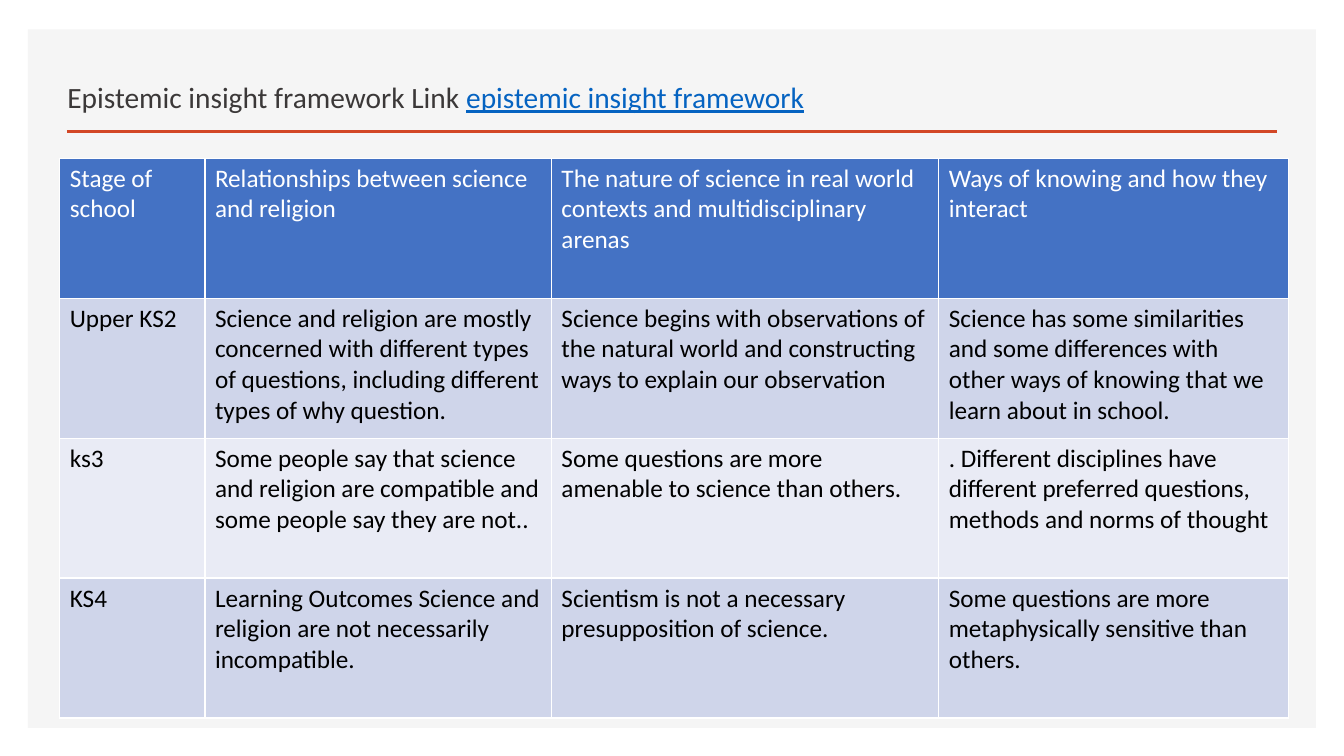
from lxml import etree
from pptx import Presentation
from pptx.dml.color import RGBColor
from pptx.enum.shapes import MSO_CONNECTOR, MSO_SHAPE
from pptx.enum.text import MSO_ANCHOR
from pptx.oxml.ns import qn
from pptx.util import Pt

LINE = MSO_CONNECTOR.STRAIGHT
RECT = MSO_SHAPE.RECTANGLE
BOTTOM = MSO_ANCHOR.BOTTOM
FONT = "Calibri"
WHITE = "FFFFFF"

WIDTHS = [103.7, 247.5, 276.7, 249.8]
HEIGHT = 100
FILLS = ["4472C4", "CFD5EA", "E9EBF5", "CFD5EA"]
ROWS = [
    ["Stage of school",
     "Relationships between science and religion",
     "The nature of science in real world contexts and multidisciplinary arenas",
     "Ways of knowing and how they interact"],
    ["Upper KS2",
     "Science and religion are mostly concerned with different types of questions, "
     "including different types of why question.",
     "Science begins with observations of the natural world and constructing "
     "ways to explain our observation",
     "Science has some similarities and some differences with other ways of "
     "knowing that we learn about in school."],
    ["ks3",
     "Some people say that science and religion are compatible and some people "
     "say they are not..",
     "Some questions are more amenable to science than others.",
     ". Different disciplines have different preferred questions, methods and "
     "norms of thought"],
    ["KS4",
     "Learning Outcomes Science and religion are not necessarily incompatible.",
     "Scientism is not a necessary presupposition of science.",
     "Some questions are more metaphysically sensitive than others."],
]


def color(code):
    return RGBColor.from_string(code)


def add_panel(slide, left, top, width, height, fill):
    panel = slide.shapes.add_shape(RECT, Pt(left), Pt(top), Pt(width), Pt(height))
    panel.shadow.inherit = False
    panel.fill.solid()
    panel.fill.fore_color.rgb = color(fill)
    panel.line.fill.background()


def add_rule(slide, left, right, top, code, width):
    rule = slide.shapes.add_connector(LINE, Pt(left), Pt(top), Pt(right), Pt(top))
    rule.line.color.rgb = color(code)
    rule.line.width = Pt(width)
    etree.SubElement(rule._element.spPr, qn("a:effectLst"))


def add_title(slide, left, top, width, height, parts):
    box = slide.shapes.add_textbox(Pt(left), Pt(top), Pt(width), Pt(height))
    frame = box.text_frame
    frame.word_wrap = True
    frame.vertical_anchor = BOTTOM
    para = frame.paragraphs[0]
    para.line_spacing = 0.9
    para.font.name = FONT
    para.font.size = Pt(21)
    for text, code, under in parts:
        run = para.add_run()
        run.text = text
        run.font.color.rgb = color(code)
        run.font.underline = under


def set_edges(cell, code, width):
    props = cell._tc.get_or_add_tcPr()
    for side in ("lnL", "lnR", "lnT", "lnB"):
        edge = etree.SubElement(props, qn("a:" + side), w=str(Pt(width)))
        fill = etree.SubElement(edge, qn("a:solidFill"))
        etree.SubElement(fill, qn("a:srgbClr"), val=code)


def fill_cell(cell, text, fill, ink):
    set_edges(cell, WHITE, 1)
    cell.fill.solid()
    cell.fill.fore_color.rgb = color(fill)
    cell.text = text
    font = cell.text_frame.paragraphs[0].font
    font.name = FONT
    font.size = Pt(18)
    font.bold = False
    font.color.rgb = color(ink)


def add_grid(slide, left, top):
    frame = slide.shapes.add_table(
        len(ROWS), len(WIDTHS), Pt(left), Pt(top),
        Pt(sum(WIDTHS)), Pt(HEIGHT * len(ROWS)))
    table = frame.table
    for column, width in zip(table.columns, WIDTHS):
        column.width = Pt(width)
    for i, texts in enumerate(ROWS):
        table.rows[i].height = Pt(HEIGHT)
        ink = "000000" if i else WHITE
        for j, text in enumerate(texts):
            fill_cell(table.cell(i, j), text, FILLS[i], ink)


def main():
    deck = Presentation()
    deck.slide_width, deck.slide_height = Pt(960), Pt(540)
    slide = deck.slides.add_slide(deck.slide_layouts[6])

    # Background panel and heading
    add_panel(slide, 20, 21, 920, 499, "F5F5F5")
    add_rule(slide, 47.8, 912, 94, "D24726", 2)
    add_title(slide, 41, 35.3, 541.4, 50.4, [
        ("Epistemic insight framework Link ", "3B3838", False),
        ("epistemic insight framework", "0563C1", True),
    ])

    # Framework by school stage
    add_grid(slide, 42.7, 113)
    deck.save("out.pptx")


if __name__ == "__main__":
    main()
